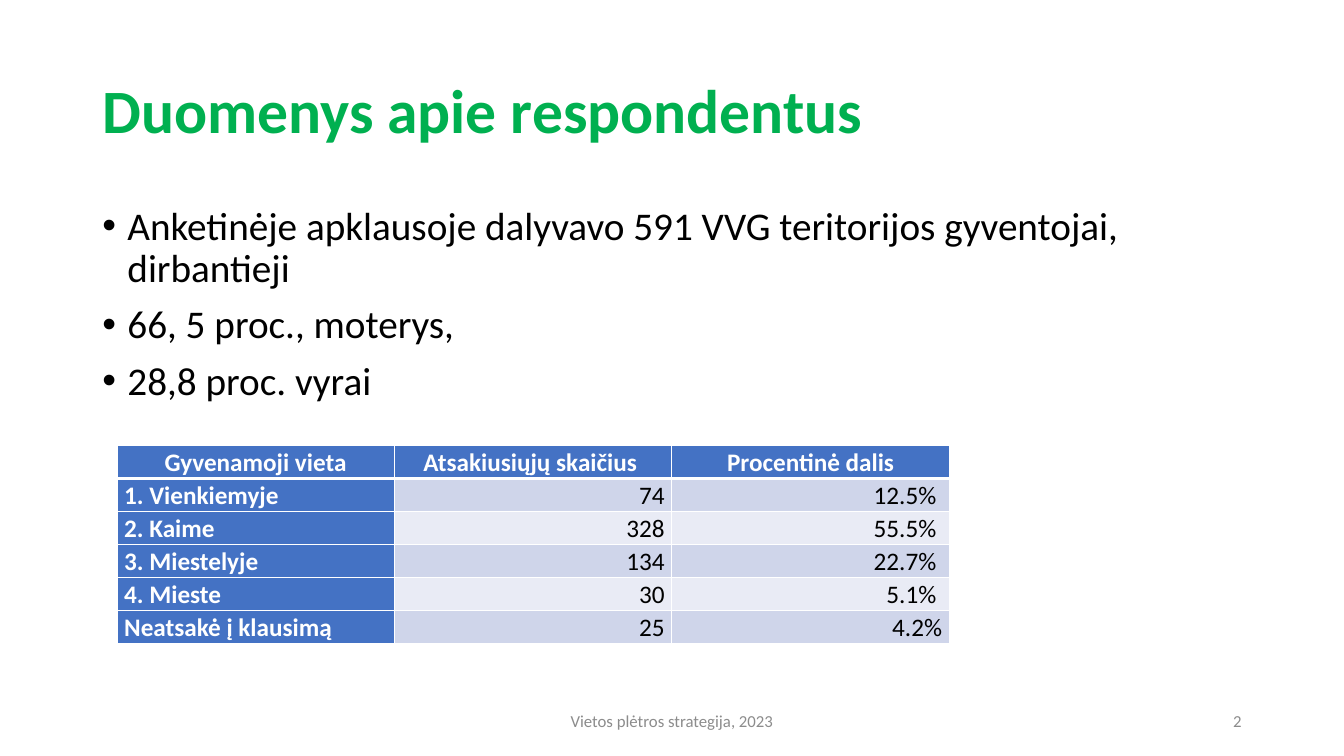
from lxml import etree
from pptx import Presentation
from pptx.dml.color import RGBColor
from pptx.enum.text import MSO_ANCHOR, PP_ALIGN
from pptx.oxml.ns import qn
from pptx.util import Pt

LEFT, CENTER, RIGHT = PP_ALIGN.LEFT, PP_ALIGN.CENTER, PP_ALIGN.RIGHT
TOP, MIDDLE = MSO_ANCHOR.TOP, MSO_ANCHOR.MIDDLE
FONT = "Calibri"
COLORS = {
    "title": "00B050", "text": "000000", "footer": "8C8C8C", "white": "FFFFFF",
    "header": "4472C4", "odd": "CFD5EA", "even": "E9EBF5",
}

TITLE = "Duomenys apie respondentus"
BULLETS = [
    "Anketinėje apklausoje dalyvavo 591 VVG teritorijos gyventojai, dirbantieji",
    "66, 5 proc., moterys,",
    "28,8 proc. vyrai",
]
FOOTER = "Vietos plėtros strategija, 2023"
PAGE_NUMBER = "2"
RESIDENCE = [
    ("Gyvenamoji vieta", "Atsakiusiųjų skaičius ", "Procentinė dalis"),
    ("1. Vienkiemyje", "74", " 12.5% "),
    ("2. Kaime", "328", " 55.5% "),
    ("3. Miestelyje", "134", " 22.7% "),
    ("4. Mieste", "30", " 5.1% "),
    ("Neatsakė į klausimą", "25", " 4.2%"),
]

MARGIN, CONTENT_W = 66, 828
FOOTER_Y, FOOTER_H = 500.5, 28.8
TABLE_X, TABLE_Y, COL_W, ROW_H = 83.5, 318.2, 198.2, 23.55
CELL_MARGIN = 5.2


def style(p, size, color, bold=False, align=LEFT, spacing=1.0):
    p.alignment = align
    p.line_spacing = spacing
    for r in p.runs:
        r.font.name = FONT
        r.font.size = Pt(size)
        r.font.bold = bold
        r.font.color.rgb = RGBColor.from_string(COLORS[color])


def add_text(s, box, lines, size, color, anchor=MIDDLE, **options):
    tf = s.shapes.add_textbox(*map(Pt, box)).text_frame
    tf.word_wrap = True
    tf.vertical_anchor = anchor
    tf.text = "\n".join(lines)
    for p in tf.paragraphs:
        style(p, size, color, **options)
    return tf


def add_bullet(p, indent):
    pPr = p._p.get_or_add_pPr()
    pPr.set("marL", str(Pt(indent)))
    pPr.set("indent", str(-Pt(indent)))
    etree.SubElement(pPr, qn("a:buFont"), typeface="Arial")
    etree.SubElement(pPr, qn("a:buChar"), char="•")


def add_borders(cell, widths):
    """Draw white borders; widths maps the sides L, R, T, B to points."""
    tcPr = cell._tc.get_or_add_tcPr()
    for side, width in widths.items():
        ln = etree.SubElement(tcPr, qn(f"a:ln{side}"), w=str(Pt(width)))
        fill = etree.SubElement(ln, qn("a:solidFill"))
        etree.SubElement(fill, qn("a:srgbClr"), val=COLORS["white"])


def add_residence_table(s):
    n_rows, n_cols = len(RESIDENCE), len(RESIDENCE[0])
    size = (TABLE_X, TABLE_Y, COL_W * n_cols, ROW_H * n_rows)
    table = s.shapes.add_table(n_rows, n_cols, *map(Pt, size)).table
    for col in table.columns:
        col.width = Pt(COL_W)
    for i, row in enumerate(RESIDENCE):
        table.rows[i].height = Pt(ROW_H)
        for j, text in enumerate(row):
            cell = table.cell(i, j)
            heading = i == 0 or j == 0
            add_borders(cell, {"L": 1, "R": 1, "T": 3 if i == 1 else 1,
                               "B": 3 if i == 0 else 1})
            cell.fill.solid()
            fill = "header" if heading else "odd" if i % 2 else "even"
            cell.fill.fore_color.rgb = RGBColor.from_string(COLORS[fill])
            cell.margin_left = cell.margin_right = Pt(CELL_MARGIN)
            cell.margin_top = cell.margin_bottom = 0
            cell.text_frame.text = text
            align = CENTER if i == 0 else LEFT if j == 0 else RIGHT
            style(cell.text_frame.paragraphs[0], 18, "white" if heading else "text",
                  heading, align, 1.07)


def main():
    prs = Presentation()
    prs.slide_width, prs.slide_height = Pt(960), Pt(540)
    s = prs.slides.add_slide(prs.slide_layouts[6])

    add_text(s, (MARGIN, 28.8, CONTENT_W, 104.4), [TITLE], 44, "title",
             bold=True, spacing=0.9)
    body = add_text(s, (MARGIN, 143.8, CONTENT_W, 342.6), BULLETS, 28, "text",
                    anchor=TOP, spacing=0.9)
    for p in body.paragraphs:
        p.space_before = Pt(10)
        add_bullet(p, 18)
    add_residence_table(s)
    add_text(s, (318, FOOTER_Y, 324, FOOTER_H), [FOOTER], 12, "footer", align=CENTER)
    add_text(s, (678, FOOTER_Y, 216, FOOTER_H), [PAGE_NUMBER], 12, "footer", align=RIGHT)
    prs.save("out.pptx")


if __name__ == "__main__":
    main()
